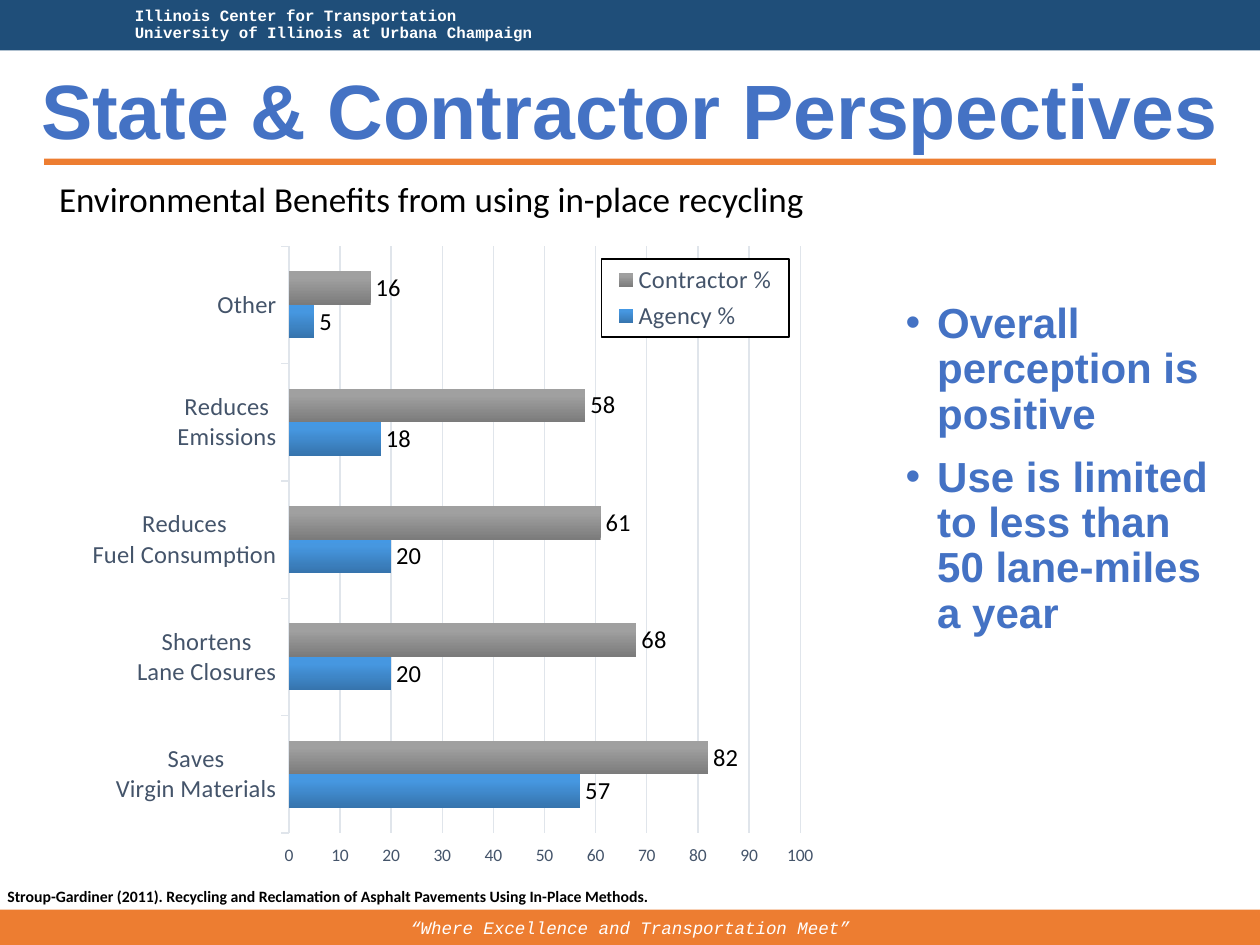
from lxml import etree
from pptx import Presentation
from pptx.chart.data import CategoryChartData
from pptx.dml.color import RGBColor
from pptx.enum.chart import XL_CHART_TYPE, XL_LABEL_POSITION, XL_LEGEND_POSITION, XL_TICK_MARK
from pptx.enum.shapes import MSO_SHAPE
from pptx.enum.text import MSO_ANCHOR, PP_ALIGN
from pptx.oxml import parse_xml
from pptx.oxml.ns import nsdecls, qn
from pptx.util import Inches, Pt

BAR_CLUSTERED = XL_CHART_TYPE.BAR_CLUSTERED
OUTSIDE_END = XL_LABEL_POSITION.OUTSIDE_END
LEGEND_RIGHT = XL_LEGEND_POSITION.RIGHT
TICK_OUT = XL_TICK_MARK.OUTSIDE
RECTANGLE = MSO_SHAPE.RECTANGLE
TOP, MIDDLE = MSO_ANCHOR.TOP, MSO_ANCHOR.MIDDLE
LEFT, CENTER = PP_ALIGN.LEFT, PP_ALIGN.CENTER

ORANGE, NAVY, BLUE = "ED7D31", "1F4E79", "4472C4"
WHITE, BLACK, SLATE, GRID = "FFFFFF", "000000", "44546A", "E0E5EB"

CATEGORIES = ["Saves\nVirgin Materials", "Shortens\nLane Closures",
              "Reduces\nFuel Consumption", "Reduces\nEmissions", "Other"]
# name, values, gradient stops from the bottom of a bar to its top
SERIES = [
    ("Agency %", (57, 20, 20, 18, 5), ((0, "3674AD"), (80, "4697E0"), (100, "4498E4"))),
    ("Contractor %", (82, 68, 61, 58, 16), ((0, "7B7B7B"), (80, "A0A0A0"), (100, "A1A1A1"))),
]


def color(hex_text):
    return RGBColor.from_string(hex_text)


def set_font(font, size, hex_text, name="Calibri", bold=False, italic=False):
    font.size, font.name = Pt(size), name
    font.bold, font.italic = bold, italic
    font.color.rgb = color(hex_text)


def set_line(line, hex_text):
    line.color.rgb = color(hex_text)
    line.width = Pt(0.75)


def manual_layout(left, top, width, height, inner=False):
    target = '<c:layoutTarget val="inner"/>' if inner else ""
    return parse_xml(
        f'<c:layout {nsdecls("c")}><c:manualLayout>{target}'
        '<c:xMode val="edge"/><c:yMode val="edge"/>'
        f'<c:x val="{left}"/><c:y val="{top}"/><c:w val="{width}"/><c:h val="{height}"/>'
        '</c:manualLayout></c:layout>')


def gradient_fill(stops):
    marks = "".join(f'<a:gs pos="{place * 1000}"><a:srgbClr val="{shade}"/></a:gs>'
                    for place, shade in stops)
    return parse_xml(f'<a:gradFill {nsdecls("a")} rotWithShape="1"><a:gsLst>{marks}</a:gsLst>'
                     '<a:lin ang="16200000" scaled="0"/></a:gradFill>')


class SlideBuilder:
    def __init__(self, page):
        self.page = page

    def band(self, left, top, width, height, fill):
        shape = self.page.shapes.add_shape(
            RECTANGLE, Inches(left), Inches(top), Inches(width), Inches(height))
        shape.shadow.inherit = False
        shape.fill.solid()
        shape.fill.fore_color.rgb = color(fill)
        shape.line.fill.background()
        return shape

    def text(self, left, top, width, height, lines, **style):
        box = self.page.shapes.add_textbox(
            Inches(left), Inches(top), Inches(width), Inches(height))
        self.fill_text(box, lines, **style)

    def fill_text(self, box, lines, size, hex_text, name="Calibri", bold=False, italic=False,
                  align=LEFT, anchor=TOP, spacing=1.0, gap=0, bullet=False, inset=0.1):
        frame = box.text_frame
        frame.word_wrap = True
        frame.vertical_anchor = anchor
        frame.margin_left = Inches(inset)
        for number, line in enumerate(lines):
            para = frame.add_paragraph() if number else frame.paragraphs[0]
            para.alignment = align
            para.line_spacing = spacing
            if number:
                para.space_before = Pt(gap)
            if bullet:
                props = para._p.get_or_add_pPr()
                props.set("marL", str(Inches(0.25)))
                props.set("indent", str(-Inches(0.25)))
                etree.SubElement(props, qn("a:buFont")).set("typeface", "Arial")
                etree.SubElement(props, qn("a:buChar")).set("char", "•")
            span = para.add_run()
            span.text = line
            set_font(span.font, size, hex_text, name, bold, italic)

    def bar_chart(self, left, top, width, height):
        data = CategoryChartData()
        data.categories = CATEGORIES
        for name, values, _ in SERIES:
            data.add_series(name, values)
        chart = self.page.shapes.add_chart(
            BAR_CLUSTERED, Inches(left), Inches(top), Inches(width), Inches(height), data).chart
        set_font(chart.font, 10, BLACK)
        chart.has_title = False

        # Bars and their labels
        plot = chart.plots[0]
        plot.gap_width, plot.overlap, plot.vary_by_categories = 150, 0, False
        for series, (_, _, stops) in zip(plot.series, SERIES):
            series.format.fill.background()
            props = series._element.spPr
            props.replace(props.find(qn("a:noFill")), gradient_fill(stops))
            labels = series.data_labels
            labels.show_value = True
            labels.position = OUTSIDE_END
            set_font(labels.font, 14, BLACK)

        # Axes
        names, scale = chart.category_axis, chart.value_axis
        for axis, size in ((names, 14), (scale, 10)):
            axis.major_tick_mark = TICK_OUT
            set_font(axis.tick_labels.font, size, SLATE)
        set_line(names.format.line, GRID)
        scale.format.line.fill.background()
        scale.minimum_scale, scale.maximum_scale, scale.major_unit = 0, 100, 10
        set_line(scale.major_gridlines.format.line, GRID)

        # Plot area and framed legend
        area = chart._chartSpace.find(qn("c:chart")).find(qn("c:plotArea"))
        for layout in area.findall(qn("c:layout")):
            area.remove(layout)
        area.insert(0, manual_layout(0.284, 0.03, 0.681, 0.906, inner=True))
        chart.has_legend = True
        legend = chart.legend
        legend.position = LEGEND_RIGHT
        legend.include_in_layout = False
        set_font(legend.font, 14, SLATE)
        element = legend._element
        for layout in element.findall(qn("c:layout")):
            element.remove(layout)
        element.find(qn("c:legendPos")).addnext(manual_layout(0.7, 0.05, 0.25, 0.12))
        element.find(qn("c:overlay")).addnext(parse_xml(
            f'<c:spPr {nsdecls("c", "a")}><a:solidFill><a:srgbClr val="{WHITE}"/></a:solidFill>'
            f'<a:ln w="9525"><a:solidFill><a:srgbClr val="{BLACK}"/></a:solidFill></a:ln></c:spPr>'))


def main():
    deck = Presentation()
    deck.slide_width, deck.slide_height = Inches(10), Inches(7.5)
    builder = SlideBuilder(deck.slides.add_slide(deck.slide_layouts[6]))

    # Header, title rule and footer
    footer = builder.band(0, 7.22, 10, 0.28, ORANGE)
    builder.fill_text(footer, ["“Where Excellence and Transportation Meet”"], size=10,
                      hex_text=WHITE, name="Courier New", italic=True, align=CENTER,
                      anchor=MIDDLE)
    header = builder.band(0, 0, 10, 0.4, NAVY)
    builder.fill_text(header, ["Illinois Center for Transportation",
                               "University of Illinois at Urbana Champaign"], size=9,
                      hex_text=WHITE, name="Courier New", bold=True, anchor=MIDDLE,
                      spacing=0.9, inset=1.07)
    builder.band(0.35, 1.26, 9.3, 0.05, ORANGE)

    # Title
    builder.text(0, 0.41, 10, 1, ["State & Contractor Perspectives"], size=44, hex_text=BLUE,
                 name="Arial", bold=True, align=CENTER, anchor=MIDDLE, spacing=0.9)

    # Survey chart
    builder.bar_chart(0.6, 1.8, 5.96, 5.14)

    # Findings
    builder.text(7.09, 2.35, 2.76, 2.82,
                 ["Overall perception is positive",
                  "Use is limited to less than 50 lane-miles a year"],
                 size=24, hex_text=BLUE, name="Arial", bold=True,
                 spacing=0.9, gap=10, bullet=True)

    # Chart heading and citation
    builder.text(0.37, 1.36, 6.72, 0.44, ["Environmental Benefits from using in-place recycling"],
                 size=20, hex_text=BLACK)
    builder.text(-0.04, 6.99, 6.15, 0.25,
                 ["Stroup-Gardiner (2011). Recycling and Reclamation of Asphalt Pavements "
                  "Using In-Place Methods."], size=9, hex_text=BLACK, bold=True)

    deck.save("out.pptx")


if __name__ == "__main__":
    main()
